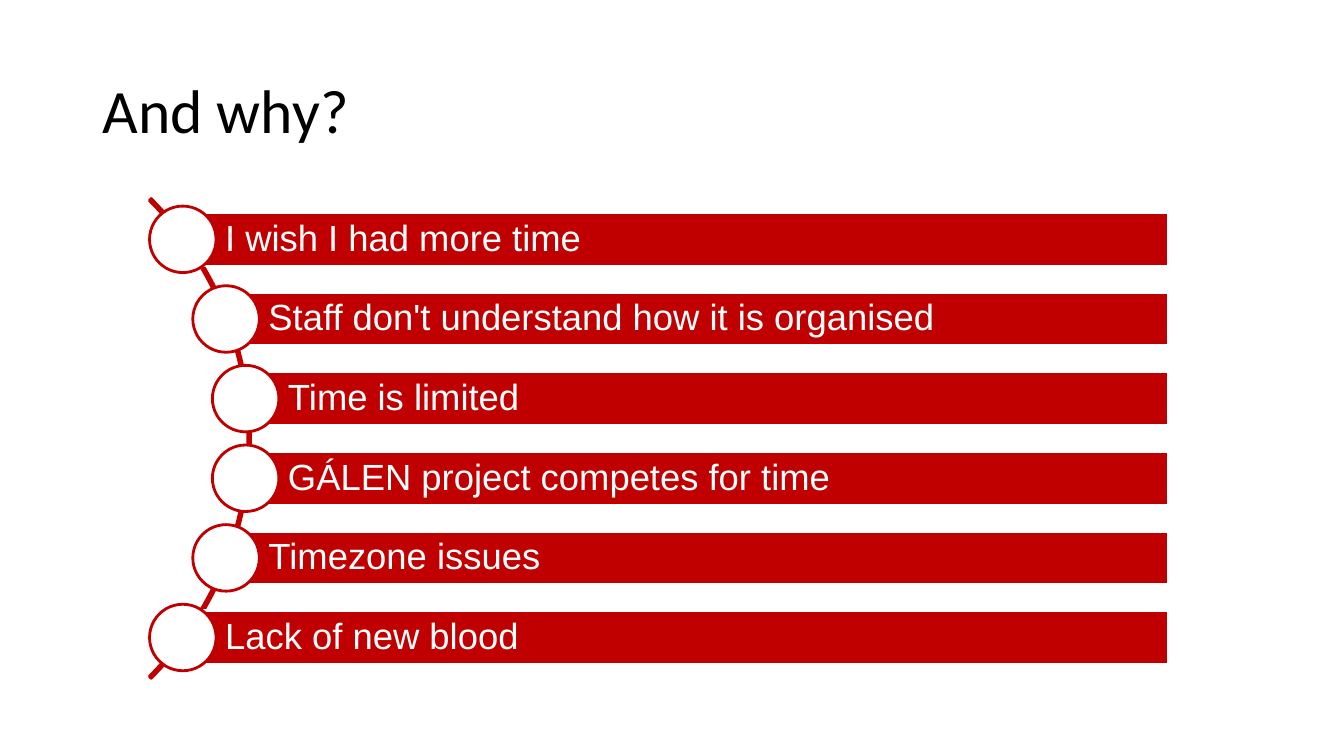
"""Build the "And why?" slide: six reasons strung along an arc."""
from math import sqrt

from pptx import Presentation
from pptx.dml.color import RGBColor
from pptx.enum.shapes import MSO_SHAPE
from pptx.enum.text import MSO_ANCHOR, PP_ALIGN
from pptx.util import Inches, Pt

TITLE = "And why?"
REASONS = [
    "I wish I had more time",
    "Staff don't understand how it is organised",
    "Time is limited",
    "GÁLEN project competes for time",
    "Timezone issues",
    "Lack of new blood",
]

RED = RGBColor(0xC0, 0x00, 0x00)
WHITE = RGBColor(0xFF, 0xFF, 0xFF)
BLACK = RGBColor(0x00, 0x00, 0x00)
ARC, RECT, OVAL = MSO_SHAPE.BLOCK_ARC, MSO_SHAPE.RECTANGLE, MSO_SHAPE.OVAL
MIDDLE, LEFT = MSO_ANCHOR.MIDDLE, PP_ALIGN.LEFT

MID_X, MID_Y = -0.88, 4.35
ARC_SIZE = 6.73
RADIUS = 3.34
STEP = 0.79
BAR_H, BAR_END = 0.53, 11.59
DOT = 0.66


def add_part(slide, kind, box, fill, line):
    part = slide.shapes.add_shape(kind, *map(Inches, box))
    part.shadow.inherit = False
    if fill is None:
        part.fill.background()
    else:
        part.fill.solid()
        part.fill.fore_color.rgb = fill
    part.line.color.rgb = line
    part.line.width = Pt(2)
    return part


def write(shape, text, font, size, color, pads):
    frame = shape.text_frame
    frame.word_wrap = True
    frame.vertical_anchor = MIDDLE
    (frame.margin_left, frame.margin_top,
     frame.margin_right, frame.margin_bottom) = map(Inches, pads)
    para = frame.paragraphs[0]
    para.alignment = LEFT
    para.line_spacing = 0.9
    run = para.add_run()
    run.text = text
    run.font.name = font
    run.font.size = Pt(size)
    run.font.color.rgb = color


def main():
    deck = Presentation()
    deck.slide_width, deck.slide_height = Inches(13.33), Inches(7.5)
    slide = deck.slides.add_slide(deck.slide_layouts[6])

    title = slide.shapes.add_textbox(*map(Inches, (0.92, 0.4, 11.5, 1.45)))
    write(title, TITLE, "Calibri", 44, BLACK, (0.1, 0.05, 0.1, 0.05))

    half = ARC_SIZE / 2
    arc = add_part(slide, ARC, (MID_X - half, MID_Y - half, ARC_SIZE, ARC_SIZE), None, RED)
    for index, value in enumerate((189, 27, 0.004)):
        arc.adjustments[index] = value

    for row, reason in enumerate(REASONS):
        drop = (row - (len(REASONS) - 1) / 2) * STEP
        x, y = MID_X + sqrt(RADIUS ** 2 - drop ** 2), MID_Y + drop
        bar = add_part(slide, RECT, (x, y - BAR_H / 2, BAR_END - x, BAR_H), RED, WHITE)
        write(bar, reason, "Arial", 26, WHITE, (0.42, 0.07, 0.07, 0.07))
        add_part(slide, OVAL, (x - DOT / 2, y - DOT / 2, DOT, DOT), WHITE, RED)

    deck.save("out.pptx")


if __name__ == "__main__":
    main()
